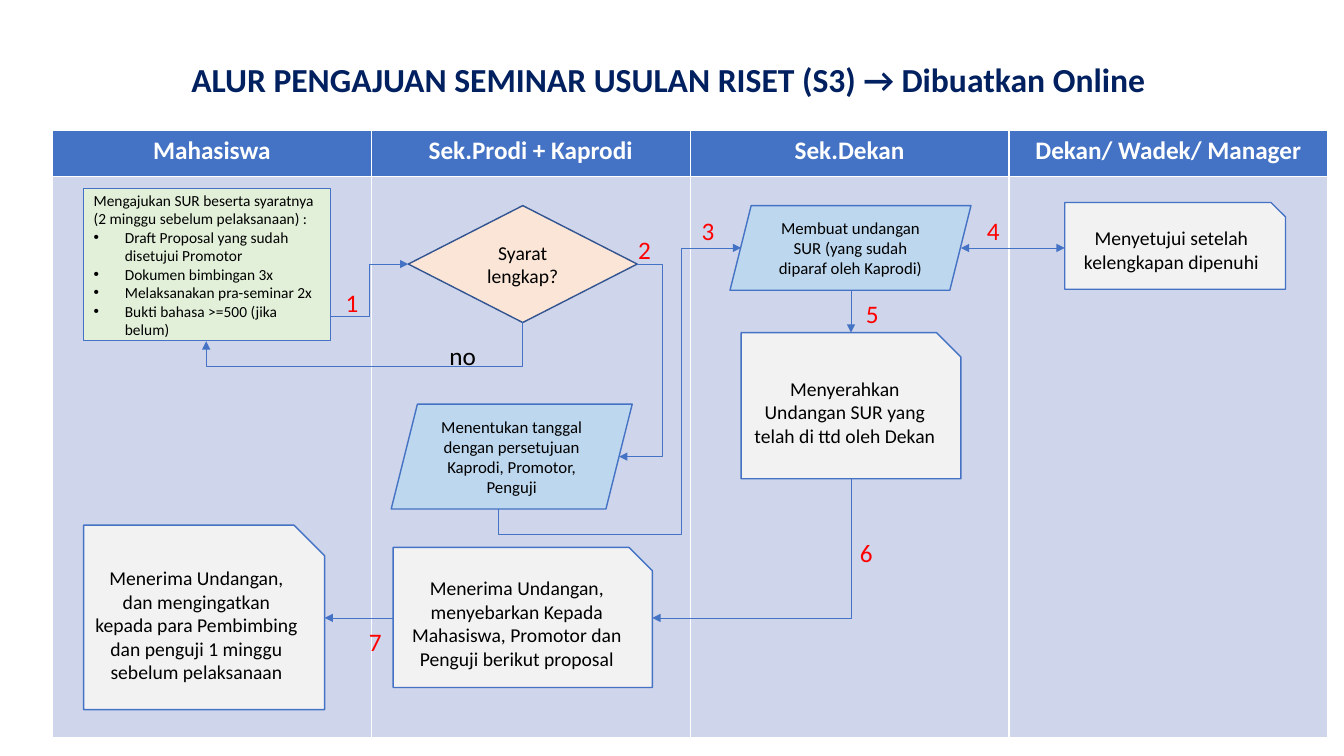
from dataclasses import dataclass

from lxml.etree import SubElement
from pptx import Presentation
from pptx.dml.color import RGBColor
from pptx.enum.shapes import MSO_CONNECTOR, MSO_SHAPE
from pptx.enum.text import MSO_ANCHOR, MSO_AUTO_SIZE, PP_ALIGN
from pptx.oxml.ns import qn
from pptx.util import Emu, Pt

PX = 9144  # 100 px to the inch
BLUE, GREY, SKY = "4472C4", "F2F2F2", "BDD7EE"
BLACK, RED, WHITE = "000000", "FF0000", "FFFFFF"
RECT, DIAMOND = MSO_SHAPE.RECTANGLE, MSO_SHAPE.DIAMOND
SLANT, CARD = MSO_SHAPE.PARALLELOGRAM, MSO_SHAPE.SNIP_1_RECTANGLE


@dataclass
class Step:
    name: str
    kind: int
    box: tuple[int, int, int, int]
    fill: str
    size: int
    text: str
    bullets: tuple[str, ...] = ()
    line: str = BLUE


@dataclass
class Flow:
    """Arrow between connection sites; bends are alternating x/y positions (y first if turned)."""
    source: tuple[str, int]
    target: tuple[str, int]
    begin: tuple[int, int]
    end: tuple[int, int]
    bends: tuple[int, ...] = ()
    turned: bool = False
    both_ways: bool = False


@dataclass
class Label:
    text: str
    box: tuple[int, int, int, int]
    color: str = RED
    size: int = 18
    bold: bool = False


LANES = ["Mahasiswa", "Sek.Prodi + Kaprodi", "Sek.Dekan", "Dekan/ Wadek/ Manager"]

STEPS = [
    Step("apply", RECT, (83, 187, 245, 151), "E2F0D9", 11,
         "Mengajukan SUR beserta syaratnya (2 minggu sebelum pelaksanaan) :",
         ("Draft Proposal yang sudah disetujui Promotor", "Dokumen bimbingan 3x",
          "Melaksanakan pra-seminar 2x", "Bukti bahasa >=500 (jika belum)")),
    Step("check", DIAMOND, (405, 204, 227, 116), "FBE5D6", 14, "Syarat lengkap?", line="325491"),
    Step("invite", SLANT, (724, 204, 239, 84), SKY, 12,
         "Membuat undangan SUR (yang sudah diparaf oleh Kaprodi)"),
    Step("schedule", SLANT, (388, 401, 239, 104), SKY, 12,
         "Menentukan tanggal dengan persetujuan Kaprodi, Promotor, Penguji"),
    Step("hand over", CARD, (735, 330, 218, 145), GREY, 14,
         "Menyerahkan Undangan SUR yang telah di ttd oleh Dekan"),
    Step("spread", CARD, (390, 543, 257, 139), GREY, 14,
         "Menerima Undangan, menyebarkan Kepada Mahasiswa, Promotor dan Penguji berikut proposal"),
    Step("receive", CARD, (83, 521, 239, 183), GREY, 14,
         "Menerima Undangan, dan mengingatkan kepada para Pembimbing dan penguji 1 minggu "
         "sebelum pelaksanaan"),
    Step("approve", CARD, (1056, 201, 219, 86), GREY, 14, "Menyetujui setelah kelengkapan dipenuhi"),
]

FLOWS = [
    Flow(("apply", 3), ("check", 1), (327, 314), (405, 262), (366,)),
    Flow(("check", 2), ("apply", 2), (519, 320), (205, 339), (364,), turned=True),
    Flow(("check", 3), ("schedule", 5), (632, 262), (614, 453), (657,)),
    Flow(("schedule", 3), ("invite", 2), (494, 505), (735, 246), (530, 676), turned=True),
    Flow(("invite", 4), ("hand over", 3), (844, 288), (844, 330)),
    Flow(("hand over", 1), ("spread", 0), (844, 474), (647, 613), turned=True),
    Flow(("invite", 5), ("approve", 2), (953, 246), (1056, 246), both_ways=True),
    Flow(("spread", 2), ("receive", 0), (390, 613), (322, 613)),
]

LABELS = [
    Label("no", (436, 333, 47, 40), BLACK),
    Label("ALUR PENGAJUAN SEMINAR USULAN RISET (S3) → Dibuatkan Online",
          (180, 54, 974, 50), "002060", 24, True),
] + [
    Label(str(n), (x, y, 33, 40))
    for n, (x, y) in enumerate([(333, 280), (623, 228), (686, 209), (969, 209),
                                (849, 291), (843, 528), (356, 616)], 1)
]


def px(*lengths: int) -> list[Emu]:
    return [Emu(n * PX) for n in lengths]


def rgb(color: str) -> RGBColor:
    return RGBColor.from_string(color)


def paint(fill, color: str) -> None:
    fill.solid()
    fill.fore_color.rgb = rgb(color)


def write(p, text: str, size: int, color: str = BLACK, bold: bool = False,
          align: PP_ALIGN = PP_ALIGN.LEFT, bullet: bool = False) -> None:
    p.alignment = align
    if bullet:
        pPr = p._p.get_or_add_pPr()
        pPr.set("marL", str(31 * PX))
        pPr.set("indent", str(-31 * PX))
        SubElement(pPr, qn("a:buFont"), typeface="Arial")
        SubElement(pPr, qn("a:buChar"), char="•")
    r = p.add_run()
    r.text = text
    r.font.name, r.font.size, r.font.bold = "Calibri", Pt(size), bold
    r.font.color.rgb = rgb(color)


def add_lanes(shapes) -> None:
    table = shapes.add_table(2, len(LANES), *px(52, 129, 1265, 603)).table
    table.rows[0].height, table.rows[1].height = px(46, 557)
    for col, lane in enumerate(LANES):
        head, body = table.cell(0, col), table.cell(1, col)
        paint(head.fill, BLUE)
        paint(body.fill, "CFD5EA")
        write(head.text_frame.paragraphs[0], lane, 18, WHITE, True, PP_ALIGN.CENTER)


def add_step(shapes, step: Step):
    sp = shapes.add_shape(step.kind, *px(*step.box))
    sp.shadow.inherit = False
    paint(sp.fill, step.fill)
    sp.line.color.rgb = rgb(step.line)
    sp.line.width = Pt(1)
    tf = sp.text_frame
    tf.word_wrap = True
    tf.vertical_anchor = MSO_ANCHOR.MIDDLE
    align = PP_ALIGN.LEFT if step.bullets else PP_ALIGN.CENTER
    write(tf.paragraphs[0], step.text, step.size, align=align)
    for item in step.bullets:
        write(tf.add_paragraph(), item, step.size, bullet=True)
    return sp


def bend_shape(cxn, flow: Flow) -> None:
    """Set the elbow preset, its bend ratios and, for a turned elbow, the rotated frame."""
    (x1, y1), (x2, y2) = flow.begin, flow.end
    geom = cxn._element.spPr.find(qn("a:prstGeom"))
    geom.set("prst", f"bentConnector{2 + len(flow.bends)}")
    axes = [(x1, x2), (y1, y2)]
    if flow.turned:
        axes.reverse()
        w, h = abs(y2 - y1), abs(x2 - x1)
        cxn.left, cxn.top, cxn.width, cxn.height = px((x1 + x2 - w) // 2, (y1 + y2 - h) // 2, w, h)
        xfrm = cxn._element.spPr.find(qn("a:xfrm"))
        xfrm.set("rot", str(90 * 60000))
        xfrm.set("flipH", str(int(y2 < y1)))
        xfrm.set("flipV", str(int(x2 > x1)))
    guides = geom.find(qn("a:avLst"))
    for n, (bend, (start, stop)) in enumerate(zip(flow.bends, axes), 1):
        ratio = round((bend - start) / (stop - start) * 100000)
        SubElement(guides, qn("a:gd"), name=f"adj{n}", fmla=f"val {ratio}")


def add_flow(shapes, flow: Flow, steps: dict) -> None:
    elbow = flow.turned or bool(flow.bends)
    kind = MSO_CONNECTOR.ELBOW if elbow else MSO_CONNECTOR.STRAIGHT
    cxn = shapes.add_connector(kind, *px(*flow.begin, *flow.end))
    if elbow:
        bend_shape(cxn, flow)
    links = cxn._element.find(qn("p:nvCxnSpPr")).find(qn("p:cNvCxnSpPr"))
    for tag, (name, site) in (("a:stCxn", flow.source), ("a:endCxn", flow.target)):
        SubElement(links, qn(tag), id=str(steps[name].shape_id), idx=str(site))
    cxn.line.color.rgb = rgb(BLUE)
    cxn.line.width = Pt(0.5)
    ln = cxn.line._get_or_add_ln()
    for tag in ("a:headEnd", "a:tailEnd") if flow.both_ways else ("a:tailEnd",):
        SubElement(ln, qn(tag), type="triangle")
    SubElement(cxn._element.spPr, qn("a:effectLst"))


def add_label(shapes, label: Label) -> None:
    tf = shapes.add_textbox(*px(*label.box)).text_frame
    tf.word_wrap = False
    tf.auto_size = MSO_AUTO_SIZE.SHAPE_TO_FIT_TEXT
    write(tf.paragraphs[0], label.text, label.size, label.color, label.bold)


def main() -> None:
    prs = Presentation()
    prs.slide_width, prs.slide_height = px(1333, 750)
    shapes = prs.slides.add_slide(prs.slide_layouts[6]).shapes
    add_lanes(shapes)
    steps = {step.name: add_step(shapes, step) for step in STEPS}
    for flow in FLOWS:
        add_flow(shapes, flow, steps)
    for label in LABELS:
        add_label(shapes, label)
    prs.save("out.pptx")


if __name__ == "__main__":
    main()
